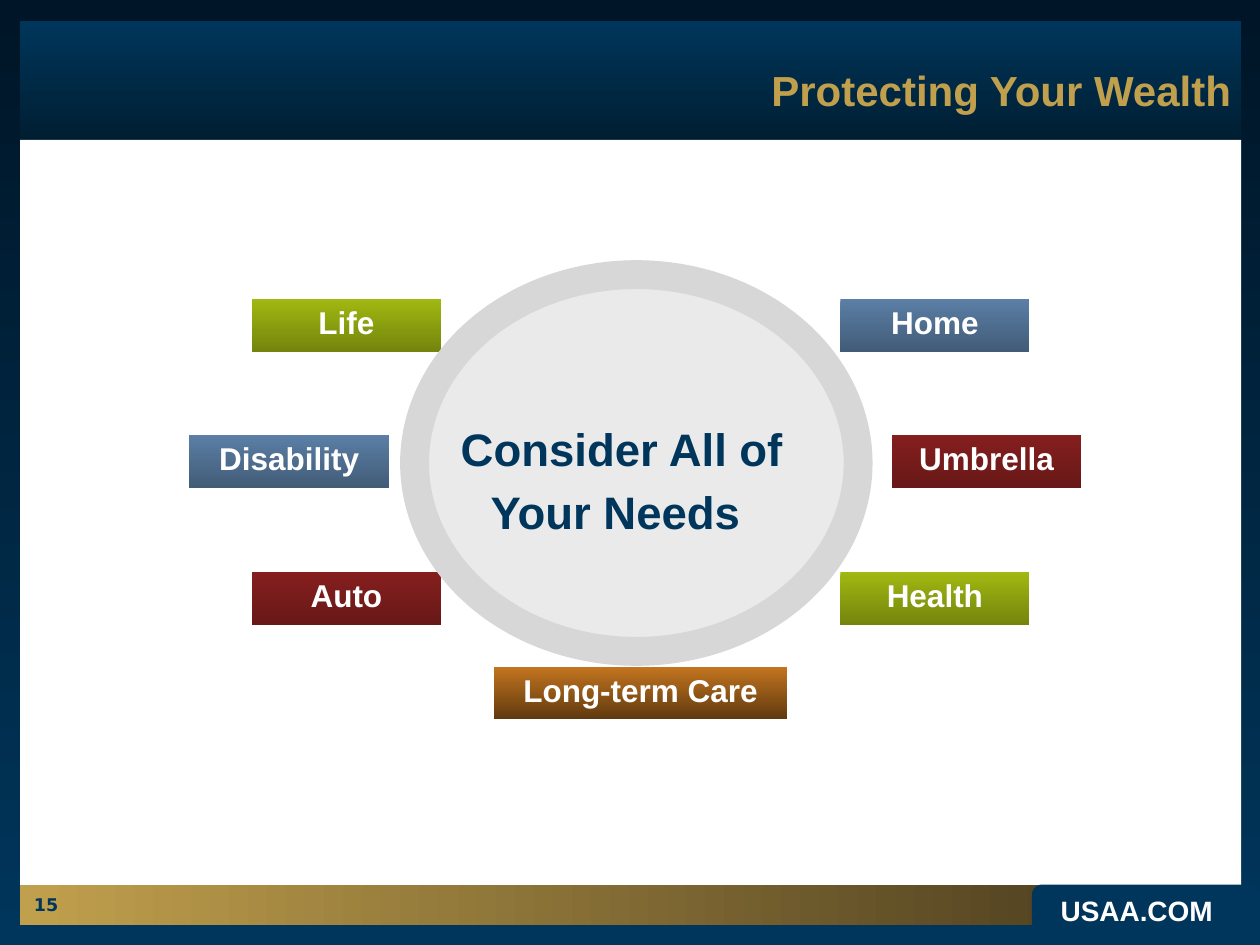
from pptx import Presentation
from pptx.dml.color import RGBColor
from pptx.enum.shapes import MSO_SHAPE as Shape
from pptx.enum.text import MSO_ANCHOR as Anchor, PP_ALIGN as Align
from pptx.util import Inches, Pt

# Content
TITLE = "Protecting Your Wealth"
CENTER = "Consider All of Your Needs "  # the final space offsets the second line
SITE = "USAA.COM"
PAGE_NUMBER = "15"
# Label, colour, left, row, width
NEEDS = [
    ("Life", "green", 2, 0, 1.5),
    ("Disability", "blue", 1.5, 1, 1.59),
    ("Auto", "red", 2, 2, 1.5),
    ("Home", "blue", 6.67, 0, 1.5),
    ("Umbrella", "red", 7.08, 1, 1.5),
    ("Health", "green", 6.67, 2, 1.5),
    ("Long-term Care", "orange", 3.92, 3, 2.33),
]
ROW_TOPS = [2.37, 3.45, 4.54, 5.29]
LABEL_HEIGHT = 0.42


class Theme:
    font, number_font = "Arial", "DejaVu Sans"
    navy, gold, white = "00365B", "C1A04D", "FFFFFF"
    disc, ring = "EAEAEA", "D7D7D7"
    frame = ("001527", navy)
    header = (navy, "001B2D")
    footer = (gold, "554522")
    labels = {
        "green": ("A0B811", "74850D"),
        "blue": ("5B7FA6", "425C78"),
        "red": ("841F1E", "681817"),
        "orange": ("C3751F", "5F390F"),
    }
    title_size, center_size, label_size = 24, 26, 18
    site_size, number_size = 16, 10


def add_block(page, kind, at, fill, angle=270):
    """Add an unlined shape; a pair of colours makes a gradient."""
    block = page.shapes.add_shape(kind, *map(Inches, at))
    block.shadow.inherit = False
    block.line.fill.background()
    if isinstance(fill, tuple):
        block.fill.gradient()
        block.fill.gradient_angle = angle
        for stop, color, position in zip(block.fill.gradient_stops, fill, (0, 1)):
            stop.color.rgb = RGBColor.from_string(color)
            stop.position = position
    else:
        block.fill.solid()
        block.fill.fore_color.rgb = RGBColor.from_string(fill)
    return block


def write(box, text, size, color, align=Align.LEFT, anchor=Anchor.TOP,
          insets=(0.1, 0.05, 0.1, 0.05), font=Theme.font, wrap=True):
    frame = box.text_frame
    frame.text = text
    frame.word_wrap = wrap
    frame.vertical_anchor = anchor
    (frame.margin_left, frame.margin_top,
     frame.margin_right, frame.margin_bottom) = map(Inches, insets)
    para = frame.paragraphs[0]
    para.alignment = align
    span = para.runs[0]
    span.font.name, span.font.size, span.font.bold = font, Pt(size), True
    span.font.color.rgb = RGBColor.from_string(color)
    return para


def add_text(page, at, *args, **options):
    return write(page.shapes.add_textbox(*map(Inches, at)), *args, **options)


def build():
    deck = Presentation()
    deck.slide_width, deck.slide_height = Inches(10), Inches(7.5)
    page = deck.slides.add_slide(deck.slide_layouts[6])

    # Frame, header, panel and footer
    add_block(page, Shape.RECTANGLE, (0, 0, 10, 7.5), Theme.frame)
    add_block(page, Shape.RECTANGLE, (0.16, 0.17, 9.69, 1.06), Theme.header)
    add_block(page, Shape.RECTANGLE, (0.16, 1.11, 9.69, 5.95), Theme.white)
    add_block(page, Shape.RECTANGLE, (0.16, 7.02, 8.15, 0.32), Theme.footer, angle=0)
    add_block(page, Shape.ROUNDED_RECTANGLE, (8.19, 7.02, 1.81, 0.48), Theme.navy)
    add_text(page, (8.32, 7.04, 1.41, 0.37), SITE, Theme.site_size, Theme.white,
             wrap=False)
    add_text(page, (0.27, 7.06, 0.63, 0.24), PAGE_NUMBER, Theme.number_size,
             Theme.navy, anchor=Anchor.MIDDLE, insets=(0, 0, 0, 0),
             font=Theme.number_font)

    # Title
    add_text(page, (1.42, 0.34, 8.35, 0.57), TITLE, Theme.title_size, Theme.gold,
             align=Align.RIGHT, anchor=Anchor.BOTTOM, insets=(0, 0, 0, 0))

    # Labels around the disc
    for text, color, left, row, width in NEEDS:
        label = add_block(page, Shape.RECTANGLE,
                          (left, ROW_TOPS[row], width, LABEL_HEIGHT),
                          Theme.labels[color])
        write(label, text, Theme.label_size, Theme.white, align=Align.CENTER,
              anchor=Anchor.MIDDLE, insets=(0.1, 0.05, 0.1, 0.1))

    # Central disc and its message
    disc = add_block(page, Shape.OVAL, (3.29, 2.18, 3.52, 2.99), Theme.disc)
    disc.line.color.rgb = RGBColor.from_string(Theme.ring)
    disc.line.width = Pt(16.5)
    message = add_text(page, (3.44, 3.23, 2.99, 1.04), CENTER, Theme.center_size,
                       Theme.navy, align=Align.CENTER)
    message.line_spacing = 1.15

    deck.save("out.pptx")


if __name__ == "__main__":
    build()
